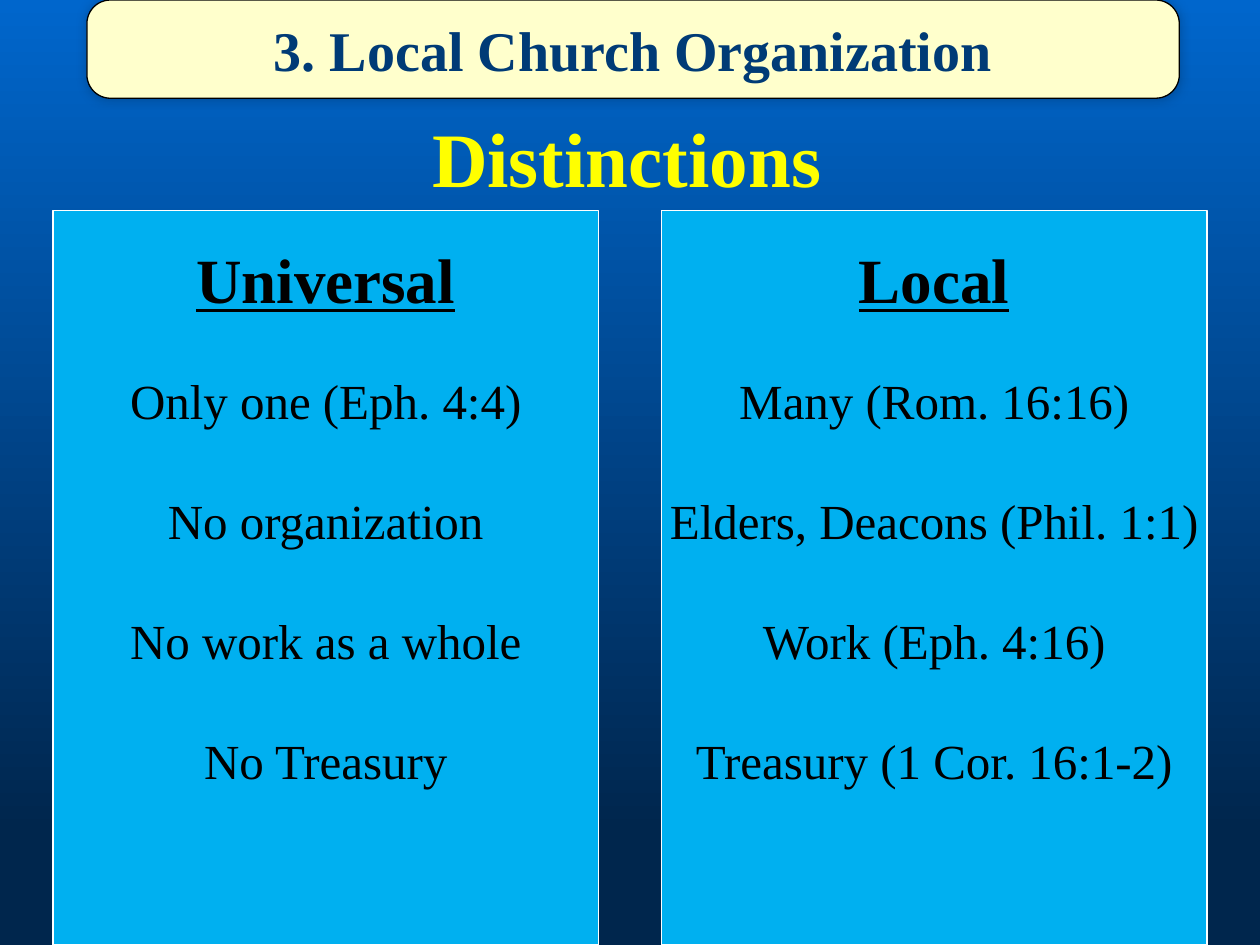
from lxml import etree
from pptx import Presentation
from pptx import util as u
from pptx.dml.color import RGBColor
from pptx.enum import shapes, text
from pptx.oxml.ns import qn

# Content
BANNER = "3. Local Church Organization"
TITLE = "Distinctions"
PANELS = [
    ("Universal", ["Only one (Eph. 4:4)", "No organization",
                   "No work as a whole", "No Treasury"]),
    ("Local", ["Many (Rom. 16:16)", "Elders, Deacons (Phil. 1:1)",
               "Work (Eph. 4:16)", "Treasury (1 Cor. 16:1-2)"]),
]

THEME = {
    "font": "Times New Roman",
    "top": "0066CC", "base": "00264D",
    "panel": "00B0F0", "edge": "FFFFFF", "ink": "000000",
    "cream": "FFFFCC", "navy": "003B76", "gold": "FFFF00",
    "banner": 32, "title": 44, "head": 36, "body": 28,
    "line": 0.75, "first": 31, "gap": 35,
}
WIDE, HIGH = 10, 7.5
PANEL_W, PANEL_TOP, PANEL_GAP = 4.33, 1.67, 0.5


def rgb(key):
    return RGBColor.from_string(THEME[key])


def write(par, words, size, color="ink", bold=False, under=False, before=0):
    par.alignment = text.PP_ALIGN.CENTER
    par.space_before = u.Pt(before)
    run = par.add_run()
    run.text = words
    font = run.font
    font.name, font.size = THEME["font"], u.Pt(THEME[size])
    font.bold, font.underline = bold, under
    font.color.rgb = rgb(color)


def add_box(slide, kind, place, fill, line):
    box = slide.shapes.add_shape(kind, *map(u.Inches, place))
    box.shadow.inherit = False
    box.fill.solid()
    box.fill.fore_color.rgb = rgb(fill)
    box.line.color.rgb = rgb(line)
    box.line.width = u.Pt(THEME["line"])
    box.text_frame.word_wrap = False
    return box


def add_shadow(box):
    effects = box._element.spPr.find(qn("a:effectLst"))
    shade = etree.SubElement(effects, qn("a:outerShdw"),
                             blurRad=str(u.Pt(6)), dist="0", dir="13500000")
    color = etree.SubElement(shade, qn("a:srgbClr"), val=THEME["ink"])
    etree.SubElement(color, qn("a:alpha"), val="20000")


def main():
    deck = Presentation()
    deck.slide_width, deck.slide_height = u.Inches(WIDE), u.Inches(HIGH)
    slide = deck.slides.add_slide(deck.slide_layouts[6])

    # Background
    back = slide.background.fill
    back.gradient()
    back.gradient_angle = 270
    for stop, key, spot in zip(back.gradient_stops, ("top", "base"), (0, 0.88)):
        stop.color.rgb = rgb(key)
        stop.position = spot

    # Panels
    left = (WIDE - 2 * PANEL_W - PANEL_GAP) / 2
    for i, (head, items) in enumerate(PANELS):
        place = (left + i * (PANEL_W + PANEL_GAP), PANEL_TOP,
                 PANEL_W, HIGH - PANEL_TOP)
        box = add_box(slide, shapes.MSO_SHAPE.RECTANGLE, place, "panel", "edge")
        frame = box.text_frame
        frame.vertical_anchor = text.MSO_ANCHOR.TOP
        frame.margin_top = u.Inches(0.24)
        write(frame.paragraphs[0], head, "head", bold=True, under=True)
        for j, item in enumerate(items):
            write(frame.add_paragraph(), item, "body",
                  before=THEME["gap" if j else "first"])

    # Title
    label = slide.shapes.add_textbox(*map(u.Inches, (3.33, 0.83, 3.29, 0.83)))
    label.text_frame.word_wrap = False
    write(label.text_frame.paragraphs[0], TITLE, "title", "gold", bold=True)

    # Banner
    box = add_box(slide, shapes.MSO_SHAPE.ROUNDED_RECTANGLE,
                  (0.69, 0, 8.67, 0.78), "cream", "ink")
    box.adjustments[0] = 0.24
    add_shadow(box)
    box.text_frame.vertical_anchor = text.MSO_ANCHOR.MIDDLE
    write(box.text_frame.paragraphs[0], BANNER, "banner", "navy", bold=True)

    deck.save("out.pptx")


if __name__ == "__main__":
    main()
